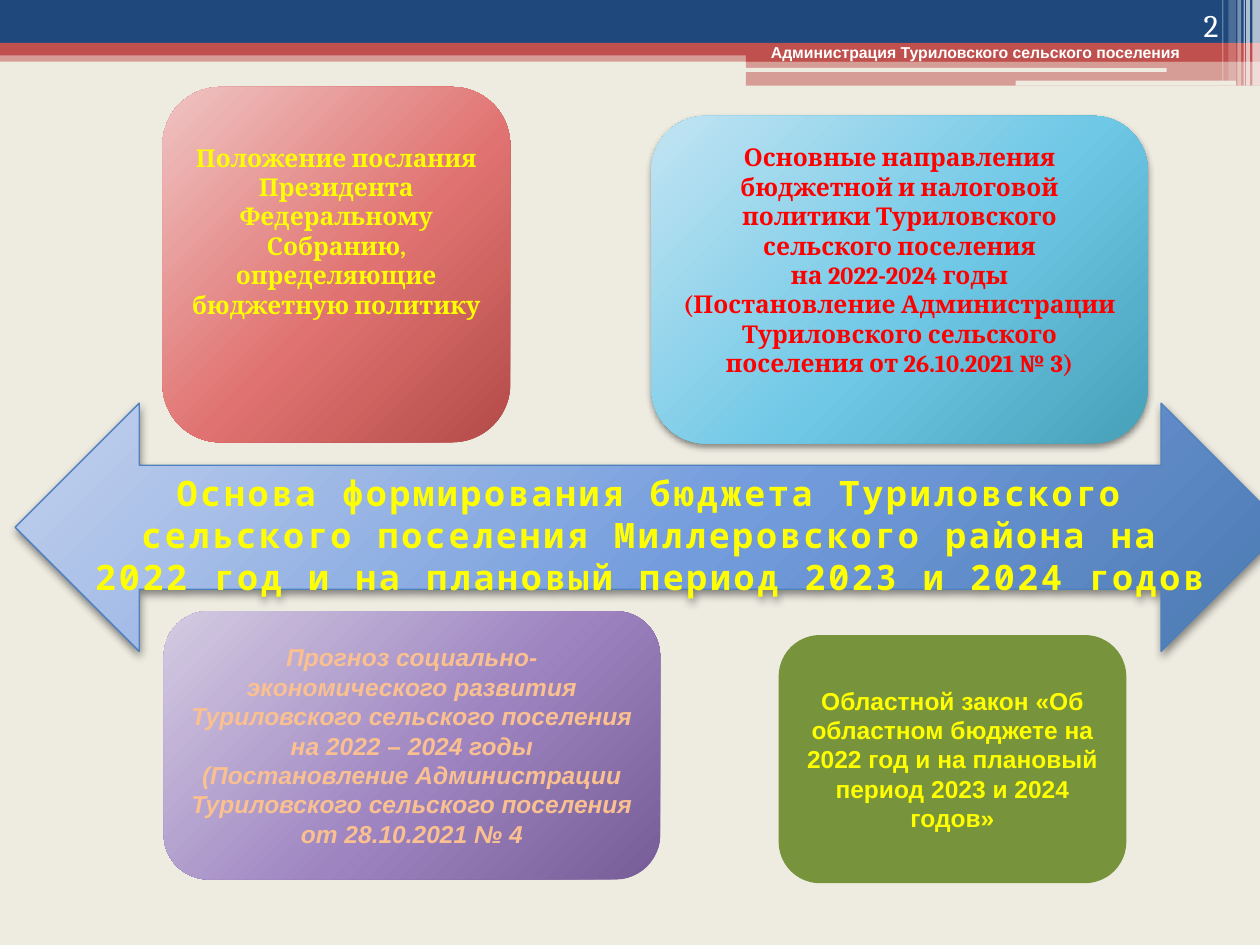
from dataclasses import dataclass

from lxml import etree
from pptx import Presentation, util as u
from pptx.dml.color import RGBColor
from pptx.enum import shapes, text
from pptx.oxml import ns, parse_xml

NAVY = RGBColor(0x1F, 0x49, 0x7D)
BRICK = RGBColor(0xC0, 0x50, 0x4D)
CREAM = RGBColor(0xEE, 0xEC, 0xE1)
WHITE = RGBColor(0xFF, 0xFF, 0xFF)
YELLOW = RGBColor(0xFF, 0xFF, 0x00)
RED = RGBColor(0xFF, 0x00, 0x00)
PEACH = RGBColor(0xFA, 0xC0, 0x90)
GREEN = RGBColor(0x77, 0x93, 0x3C)
BLUE = RGBColor(0x4F, 0x81, 0xBD)
BLACK = RGBColor(0x00, 0x00, 0x00)
ROSE_SHADES = (RGBColor(0xEF, 0xC4, 0xC3), RGBColor(0xE0, 0x73, 0x71), RGBColor(0xB3, 0x4B, 0x48))
AQUA_SHADES = (RGBColor(0xC2, 0xE4, 0xF2), RGBColor(0x6F, 0xC8, 0xE6), RGBColor(0x46, 0xA0, 0xB8))
VIOLET_SHADES = (RGBColor(0xD4, 0xCB, 0xE2), RGBColor(0x9E, 0x85, 0xC1), RGBColor(0x77, 0x5D, 0x97))
BLUE_SHADES = (RGBColor(0xC4, 0xD2, 0xEE), RGBColor(0x73, 0x9C, 0xDD), RGBColor(0x4A, 0x78, 0xB0))

SHAPE = shapes.MSO_SHAPE
ALIGN = text.PP_ALIGN
ANCHOR = text.MSO_ANCHOR
COLUMNS, ROWS, HEADER_ROWS = 1000, 750, 68


@dataclass
class Box:
    """A rectangle that is divided into columns and rows."""

    left: int
    top: int
    width: int
    height: int
    columns: int = 1
    rows: int = 1

    def area(self, column, row, across, down):
        """Return the box that covers the given grid cells."""
        cell_width, cell_height = self.width / self.columns, self.height / self.rows
        return Box(round(self.left + column * cell_width), round(self.top + row * cell_height),
                   round(across * cell_width), round(down * cell_height))

    def bounds(self):
        """Return the four lengths that python-pptx expects."""
        return self.left, self.top, self.width, self.height


def add_gradient(shape, shades):
    """Fill a shape with a circular gradient centred beyond its top left."""
    stops = "".join(f'<a:gs pos="{position}000"><a:srgbClr val="{shade}"/></a:gs>'
                    for position, shade in zip((0, 55, 100), shades))
    gradient = parse_xml(
        f'<a:gradFill {ns.nsdecls("a")} rotWithShape="1"><a:gsLst>{stops}</a:gsLst>'
        '<a:path path="circle"><a:fillToRect l="-40000" t="-90000" r="140000" b="190000"/>'
        '</a:path></a:gradFill>')
    shape.fill.background()
    empty_fill = shape.element.spPr.find(ns.qn("a:noFill"))
    empty_fill.getparent().replace(empty_fill, gradient)


def add_shadow(shape):
    """Give a shape a soft shadow below it."""
    effects = shape.element.spPr.find(ns.qn("a:effectLst"))
    effects.append(parse_xml(
        f'<a:outerShdw {ns.nsdecls("a")} blurRad="{u.Pt(4)}" dist="{u.Pt(2)}" dir="5400000" '
        f'rotWithShape="0"><a:srgbClr val="{BLACK}"><a:alpha val="45000"/></a:srgbClr></a:outerShdw>'))


def add_block(slide, box, kind, fill, opacity=100, shadow=False):
    """Add a borderless shape with a solid or a gradient fill."""
    shape = slide.shapes.add_shape(kind, *box.bounds())
    shape.shadow.inherit = False
    shape.line.fill.background()
    if isinstance(fill, RGBColor):
        shape.fill.solid()
        shape.fill.fore_color.rgb = fill
    else:
        add_gradient(shape, fill)
    if opacity < 100:
        color = shape.element.spPr.find(".//" + ns.qn("a:srgbClr"))
        etree.SubElement(color, ns.qn("a:alpha")).set("val", str(opacity * 1000))
    if shadow:
        add_shadow(shape)
    return shape


def write(shape, lines, font, size, color, align=ALIGN.CENTER, anchor=ANCHOR.MIDDLE,
          bold=True, italic=False):
    """Write one paragraph per line in a single style."""
    frame = shape.text_frame
    frame.word_wrap = True
    frame.vertical_anchor = anchor
    frame.text = "\n".join(lines)
    for paragraph in frame.paragraphs:
        paragraph.alignment = align
        paragraph.font.name = font
        paragraph.font.size = u.Pt(size)
        paragraph.font.bold = bold
        paragraph.font.italic = italic
        paragraph.font.color.rgb = color


def add_header(slide, box):
    """Draw the layered bands and the stripes at the right edge."""
    bands = [(0, 40, 1000, 9, BRICK, 50), (0, 0, 1000, 34, NAVY, 100), (0, 34, 1000, 10, BRICK, 100),
             (592, 39, 408, 10, BRICK, 100), (592, 48, 408, 20, BRICK, 50)]
    for *cells, color, opacity in bands:
        add_block(slide, box.area(*cells), SHAPE.RECTANGLE, color, opacity)
    for cells in ((591, 54, 335, 3), (806, 64, 175, 4)):
        add_block(slide, box.area(*cells), SHAPE.ROUNDED_RECTANGLE, CREAM)
    stripes = [(994, 6, 68, 65), (989, 3, 68, 65), (987, 1, 68, 60),
               (982, 3, 68, 40), (975, 6, 64, 20), (970, 1, 64, 30)]
    for column, across, down, opacity in stripes:
        add_block(slide, box.area(column, 0, across, down), SHAPE.RECTANGLE, WHITE, opacity)


def add_header_text(slide, box):
    """Add the name of the administration and the slide number."""
    label = slide.shapes.add_textbox(*box.area(602, 29, 370, 25).bounds())
    write(label, ["Администрация Туриловского сельского поселения"], "Arial", 9, WHITE,
          ALIGN.LEFT, ANCHOR.TOP)
    number = slide.shapes.add_textbox(*box.area(894, 0, 83, 40).bounds())
    write(number, ["2"], "Cambria", 18, WHITE, ALIGN.RIGHT, ANCHOR.BOTTOM, bold=False)


def add_card(slide, box, fill, lines, font, color, italic=False, shadow=False, lift=0):
    """Add a rounded card whose text is lifted by a share of its height."""
    card = add_block(slide, box, SHAPE.ROUNDED_RECTANGLE, fill, shadow=shadow)
    write(card, lines, font, 14, color, italic=italic)
    card.text_frame.margin_bottom += round(box.height * lift)


def add_cards(slide, box):
    """Place the four sources of the budget."""
    add_card(slide, box.area(129, 69, 276, 282), ROSE_SHADES,
             ["Положение послания Президента Федеральному Собранию, определяющие бюджетную политику"],
             "Cambria", YELLOW, lift=0.19)
    add_card(slide, box.area(517, 92, 394, 260), AQUA_SHADES,
             ["Основные направления бюджетной и налоговой политики Туриловского сельского поселения",
              "на 2022-2024 годы",
              "(Постановление Администрации Туриловского сельского поселения от 26.10.2021 № 3)"],
             "Cambria", RED, shadow=True, lift=0.12)
    add_card(slide, box.area(130, 485, 394, 213), VIOLET_SHADES,
             ["Прогноз социально-экономического развития Туриловского сельского поселения "
              "на 2022 – 2024 годы (Постановление Администрации Туриловского сельского поселения "
              "от 28.10.2021 № 4"], "Arial", PEACH, italic=True)
    add_card(slide, box.area(618, 504, 276, 197), GREEN,
             ["Областной закон «Об областном бюджете на 2022 год и на плановый период 2023 и 2024 годов»"],
             "Arial", YELLOW)


def add_title_arrow(slide, box):
    """Add the double arrow that carries the title."""
    arrow = add_block(slide, box, SHAPE.LEFT_RIGHT_ARROW, BLUE_SHADES, shadow=True)
    arrow.line.color.rgb = BLUE
    arrow.line.width = u.Pt(0.75)
    write(arrow, ["Основа формирования бюджета Туриловского сельского поселения Миллеровского района "
                  "на 2022 год и на плановый период 2023 и 2024 годов"],
          "Noto Sans Mono", 20, YELLOW, anchor=ANCHOR.TOP)
    for run in arrow.text_frame.paragraphs[0].runs:
        run.font._element.set("spc", "150")


def main():
    """Build the slide and save it."""
    presentation = Presentation()
    presentation.slide_width, presentation.slide_height = u.Inches(10), u.Inches(7.5)
    slide = presentation.slides.add_slide(presentation.slide_layouts[6])
    slide.background.fill.solid()
    slide.background.fill.fore_color.rgb = CREAM
    page = Box(0, 0, presentation.slide_width, presentation.slide_height, COLUMNS, ROWS)
    header = page.area(0, 0, COLUMNS, HEADER_ROWS)
    header.columns, header.rows = COLUMNS, HEADER_ROWS
    add_header(slide, header)
    add_cards(slide, page)
    add_title_arrow(slide, page.area(12, 320, 1008, 197))
    add_header_text(slide, header)
    presentation.save("out.pptx")


if __name__ == "__main__":
    main()
